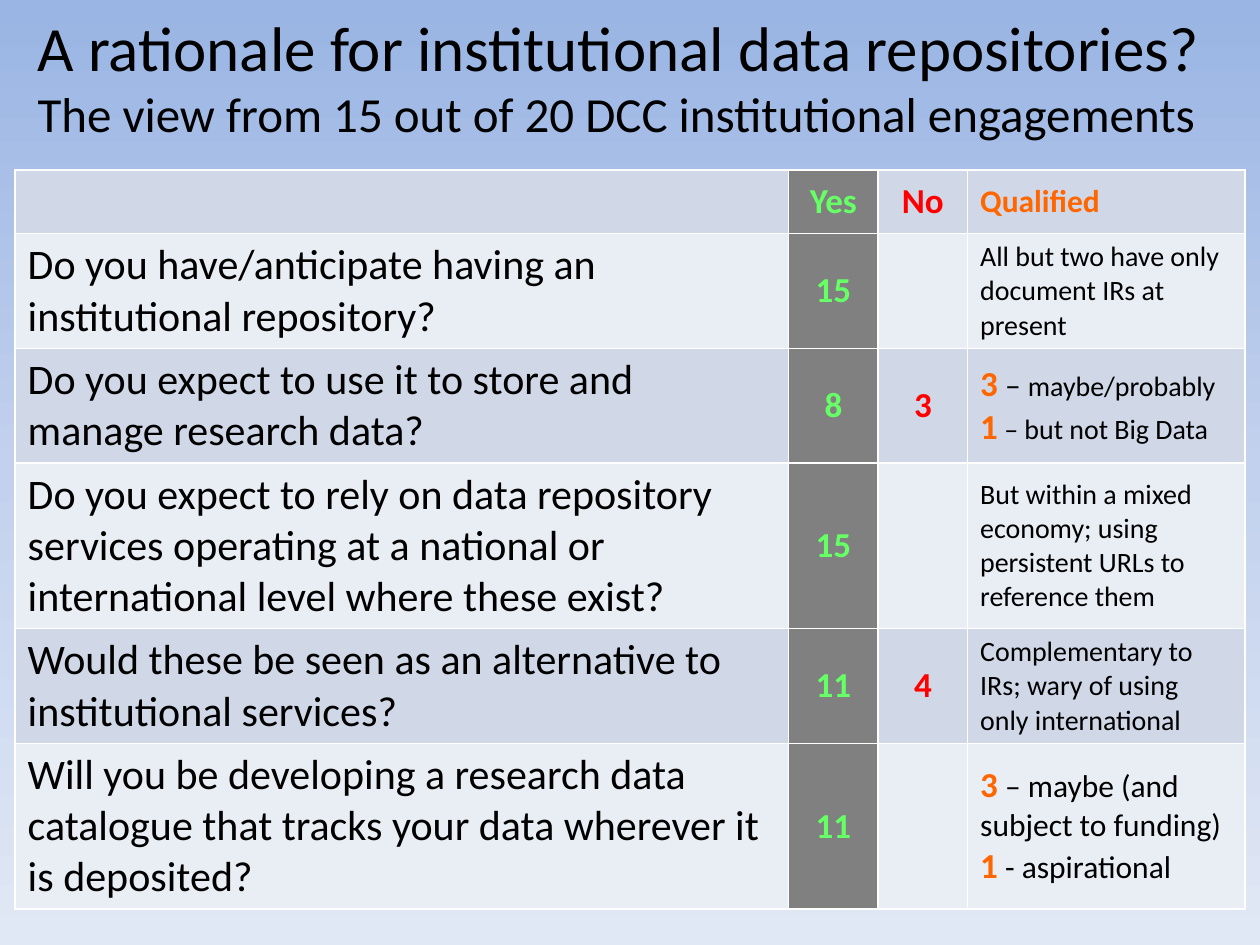
from copy import deepcopy

from lxml.etree import SubElement
from pptx import Presentation
from pptx.dml.color import RGBColor
from pptx.enum.text import MSO_ANCHOR, PP_ALIGN
from pptx.oxml.ns import qn
from pptx.util import Inches, Pt

FONT = "Calibri"
COLORS = {
    "ink": "000000", "yes": "66FF66", "no": "FF0000", "qualified": "FF6600",
    "yes_column": "808080", "band_dark": "D0D8E8", "band_light": "E9EDF4",
    "border": "FFFFFF",
}
BACKDROP = ["9AB5E4", "C2D1ED", "E1E8F5"]

HEADING = [
    ("A rationale for institutional data repositories? ", 36, "ink", False),
    ("The view from 15 out of 20 DCC institutional engagements", 28, "ink", False),
]


def note(text, size=16):
    return (text, size, "ink", False)


def count(text, color="qualified"):
    return (text, 20, color, True)


ANSWERS = [
    ("", "Yes", "No", [[("Qualified", 18, "qualified", True)]]),
    ("Do you have/anticipate having an institutional repository?", "15", "",
     [[note("All but two have only document IRs at present")]]),
    ("Do you expect to use it to store and manage research data?", "8", "3",
     [[count("3"), note(" – ", 18), note("maybe/probably")],
      [count("1"), note(" – but not Big Data")]]),
    ("Do you expect to rely on data repository services operating at a national "
     "or international level where these exist?", "15", "",
     [[note("But within a mixed economy; using persistent URLs to reference them")]]),
    ("Would these be seen as an alternative to institutional services?", "11", "4",
     [[note("Complementary to IRs; wary of using only international")]]),
    ("Will you be developing a research data catalogue that tracks your data "
     "wherever it is deposited?", "11", "",
     [[count("3"), note(" – maybe (and subject to funding)", 18)],
      [count("1"), note(" - aspirational", 18)]]),
]
COLUMN_WIDTHS = [6.14, 0.71, 0.71, 2.2]
LINES_PER_ROW = [1, 2, 2, 3, 2, 3]
LINE_HEIGHT, CELL_PADDING = 0.405, 0.1


def rgb(name):
    return RGBColor.from_string(COLORS[name])


def write(frame, paragraphs, align=PP_ALIGN.LEFT):
    for index, runs in enumerate(paragraphs):
        paragraph = frame.add_paragraph() if index else frame.paragraphs[0]
        paragraph.alignment = align
        for text, size, color, bold in runs:
            run = paragraph.add_run()
            run.text = text
            run.font.name = FONT
            run.font.size = Pt(size)
            run.font.bold = bold
            run.font.color.rgb = rgb(color)


def paint_background(slide):
    fill = slide.background.fill
    fill.gradient()
    fill.gradient_angle = 270
    stops = next(slide.element.iter(qn("a:gsLst")))
    stops.insert(1, deepcopy(stops[0]))
    for index, (stop, color) in enumerate(zip(fill.gradient_stops, BACKDROP)):
        stop.color.rgb = RGBColor.from_string(color)
        stop.position = index / (len(BACKDROP) - 1)


def style_cell(cell, fill):
    properties = cell._tc.get_or_add_tcPr()
    for side in ("a:lnL", "a:lnR", "a:lnT", "a:lnB"):
        line = SubElement(properties, qn(side), w=str(Pt(1)))
        SubElement(SubElement(line, qn("a:solidFill")), qn("a:srgbClr"),
                   val=COLORS["border"])
    cell.fill.solid()
    cell.fill.fore_color.rgb = rgb(fill)


def add_heading(slide):
    heading = slide.shapes.add_textbox(
        Inches(0.2), Inches(0.17), Inches(9.61), Inches(1.25)).text_frame
    heading.word_wrap = True
    heading.vertical_anchor = MSO_ANCHOR.MIDDLE
    heading.margin_bottom = Inches(0.44)
    write(heading, [HEADING])


def add_answers(slide):
    heights = [CELL_PADDING + LINE_HEIGHT * lines for lines in LINES_PER_ROW]
    answers = slide.shapes.add_table(
        len(ANSWERS), len(COLUMN_WIDTHS), Inches(0.12), Inches(1.35),
        Inches(sum(COLUMN_WIDTHS)), Inches(sum(heights))).table
    answers.first_row = answers.horz_banding = False
    for column, width in zip(answers.columns, COLUMN_WIDTHS):
        column.width = Inches(width)
    for row, height in zip(answers.rows, heights):
        row.height = Inches(height)

    for r, (question, yes, no, remarks) in enumerate(ANSWERS):
        band = "band_light" if r % 2 else "band_dark"
        row_content = [
            ([[(question, 24, "ink", False)]], band, PP_ALIGN.LEFT),
            ([[count(yes, "yes")]], "yes_column", PP_ALIGN.CENTER),
            ([[count(no, "no")]], band, PP_ALIGN.CENTER),
            (remarks, band, PP_ALIGN.LEFT),
        ]
        for c, (paragraphs, fill, align) in enumerate(row_content):
            cell = answers.cell(r, c)
            style_cell(cell, fill)
            cell.vertical_anchor = MSO_ANCHOR.MIDDLE if c else MSO_ANCHOR.TOP
            write(cell.text_frame, paragraphs, align)


def main():
    deck = Presentation()
    deck.slide_width, deck.slide_height = Inches(10), Inches(7.5)
    slide = deck.slides.add_slide(deck.slide_layouts[6])
    paint_background(slide)
    add_heading(slide)
    add_answers(slide)
    deck.save("out.pptx")


if __name__ == "__main__":
    main()
